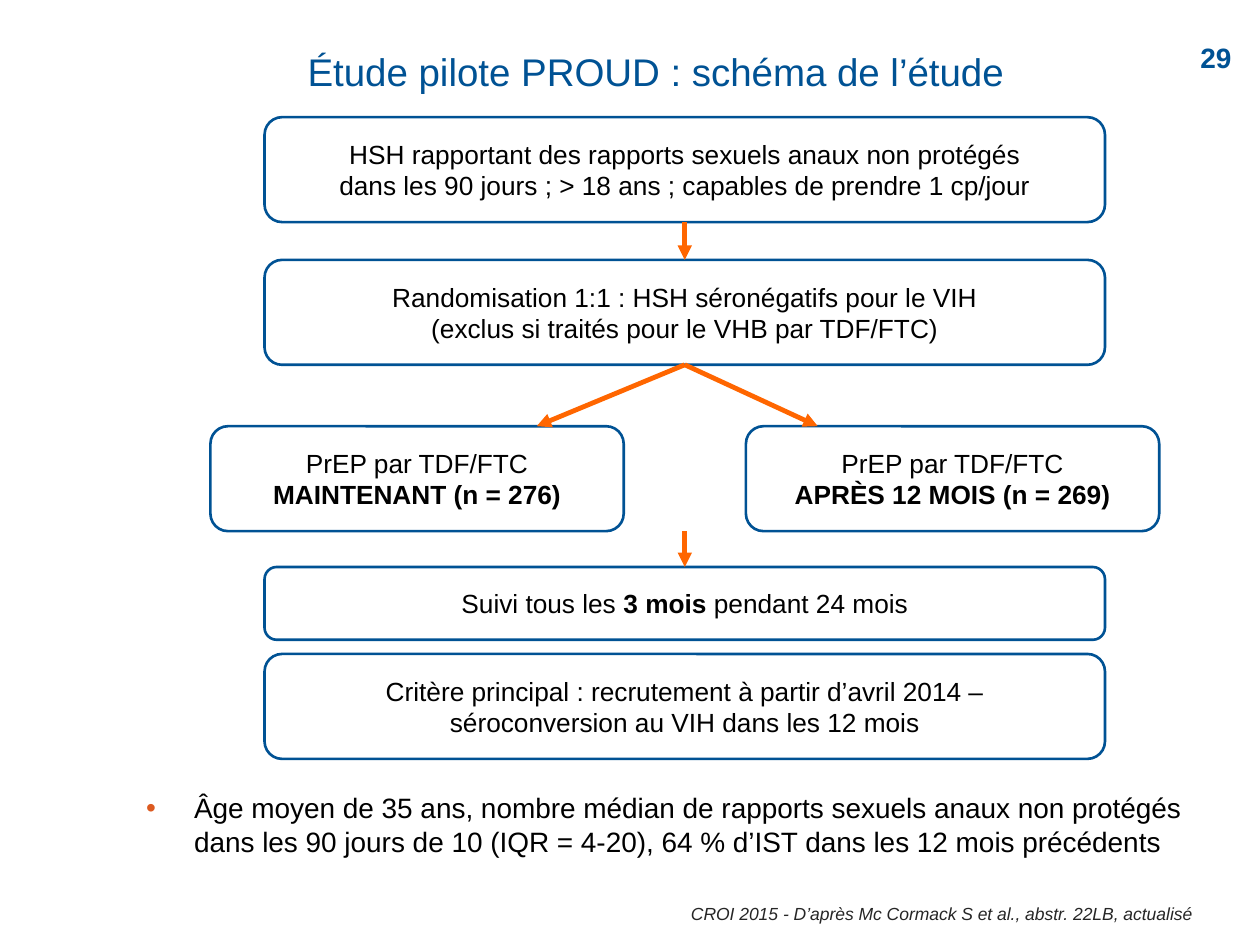
from lxml.etree import SubElement
from pptx import Presentation
from pptx.dml.color import RGBColor
from pptx.enum.shapes import MSO_CONNECTOR, MSO_SHAPE
from pptx.enum.text import MSO_ANCHOR, MSO_AUTO_SIZE, PP_ALIGN
from pptx.oxml.ns import qn
from pptx.util import Inches, Pt

WIDTH, HEIGHT = Inches(10), Inches(7.5)
BLUE, ORANGE, BULLET = "005294", "FF6600", "DC5A20"
BLACK, GREY, WHITE = "000000", "262626", "FFFFFF"

# Shares of the slide, in percent
WIDE_LEFT, WIDE = 21, 66.7
ARM_LEFTS, ARM_WIDE = (16.7, 59.2), 32.8
TALL, SHORT = 11.1, 7.7
CRITERIA_TOP, RANDOM_TOP, ARM_TOP, FOLLOW_TOP, OUTCOME_TOP = 12.4, 27.5, 45.1, 60, 69.2
ARM_ARROW_ENDS = (42.6, 64.9)
CENTRE = WIDE_LEFT + WIDE / 2

BOX_TEXT = {"size": Pt(15)}
BOTTOM, TOP = 2, 0


def color(hex_code):
    return RGBColor.from_string(hex_code)


def across(share):
    return round(WIDTH * share / 100)


def down(share):
    return round(HEIGHT * share / 100)


def area(left, top, width, height):
    return across(left), down(top), across(width), down(height)


def apply_format(target, values):
    for name, value in values.items():
        setattr(target, name, value)


def write(shape, paragraphs, font, ink, align=PP_ALIGN.CENTER, frame_format=None):
    """Fill a shape with paragraphs, each a list of (text, bold); a newline is a line break."""
    frame = shape.text_frame
    apply_format(frame, {"word_wrap": True, "auto_size": MSO_AUTO_SIZE.NONE,
                         "vertical_anchor": MSO_ANCHOR.MIDDLE, **(frame_format or {})})
    for number, runs in enumerate(paragraphs):
        paragraph = frame.add_paragraph() if number else frame.paragraphs[0]
        paragraph.alignment = align
        for text, bold in runs:
            for row, line in enumerate(text.split("\n")):
                if row:
                    paragraph.add_line_break()
                run = paragraph.add_run()
                run.text = line
                apply_format(run.font, {"name": "Arial", "bold": bold, **font})
                run.font.color.rgb = color(ink)
    return frame


def no_margins():
    return dict.fromkeys(("margin_left", "margin_top", "margin_right", "margin_bottom"), 0)


def move(shape, *shares):
    apply_format(shape, dict(zip(("left", "top", "width", "height"), area(*shares))))


def add_title(slide, text):
    title = slide.shapes.title
    move(title, 11.6, 3.5, 80.9, 8.8)
    frame = write(title, [[(text, False)]], {"size": Pt(22)}, BLUE, frame_format=no_margins())
    frame.paragraphs[0].line_spacing = Pt(22)


def add_bullet(slide, text):
    body = slide.placeholders[1]
    move(body, 11.6, 83.7, 83.4, 9.6)
    frame = write(body, [[(text, False)]], {"size": Pt(16)}, BLACK, PP_ALIGN.LEFT,
                  {**no_margins(), "vertical_anchor": MSO_ANCHOR.TOP})
    properties = frame.paragraphs[0]._p.get_or_add_pPr()
    indent = Inches(0.38)
    properties.set("marL", str(indent))
    properties.set("indent", str(-indent))
    SubElement(SubElement(properties, qn("a:buClr")), qn("a:srgbClr")).set("val", BULLET)
    SubElement(properties, qn("a:buChar")).set("char", "•")


def add_label(slide, shares, text, font, ink, align, frame_format=None):
    label = slide.shapes.add_textbox(*area(*shares))
    write(label, [[(text, font.get("bold", False))]], font, ink, align, frame_format)


def add_step(slide, left, top, width, height, paragraphs):
    step = slide.shapes.add_shape(MSO_SHAPE.ROUNDED_RECTANGLE, *area(left, top, width, height))
    step.shadow.inherit = False
    step.fill.solid()
    step.fill.fore_color.rgb = color(WHITE)
    step.line.color.rgb = color(BLUE)
    step.line.width = Pt(1.5)
    write(step, paragraphs, BOX_TEXT, BLACK)
    return step


def add_arrow(slide, start, end, source=None, target=None):
    """Draw an arrow, joined to the bottom of source and the top of target if given."""
    arrow = slide.shapes.add_connector(MSO_CONNECTOR.STRAIGHT, across(start[0]), down(start[1]),
                                       across(end[0]), down(end[1]))
    if source is not None:
        arrow.begin_connect(source, BOTTOM)
    if target is not None:
        arrow.end_connect(target, TOP)
    arrow.line.color.rgb = color(ORANGE)
    arrow.line.width = Pt(2.75)
    SubElement(arrow.line._get_or_add_ln(), qn("a:tailEnd")).set("type", "triangle")
    SubElement(arrow._element.spPr, qn("a:effectLst"))


def add_flow(slide):
    def wide_step(top, height, *runs):
        return add_step(slide, WIDE_LEFT, top, WIDE, height, [runs])

    criteria = wide_step(CRITERIA_TOP, TALL, (
        "HSH rapportant des rapports sexuels anaux non protégés\n"
        "dans les 90 jours ; > 18 ans ; capables de prendre 1 cp/jour", False))
    randomisation = wide_step(RANDOM_TOP, TALL, (
        "Randomisation 1:1 : HSH séronégatifs pour le VIH\n"
        "(exclus si traités pour le VHB par TDF/FTC)", False))
    for left, timing in zip(ARM_LEFTS, ("MAINTENANT (n = 276)", "APRÈS 12 MOIS (n = 269)")):
        add_step(slide, left, ARM_TOP, ARM_WIDE, TALL,
                 [[("PrEP par TDF/FTC", False)], [(timing, True)]])
    follow_up = wide_step(FOLLOW_TOP, SHORT, ("Suivi tous les ", False), ("3 mois ", True),
                          ("pendant 24 mois", False))
    wide_step(OUTCOME_TOP, TALL, (
        "Critère principal : recrutement à partir d’avril 2014 –\n"
        "séroconversion au VIH dans les 12 mois", False))

    add_arrow(slide, (CENTRE, CRITERIA_TOP + TALL), (CENTRE, RANDOM_TOP), criteria, randomisation)
    for end in ARM_ARROW_ENDS:
        add_arrow(slide, (CENTRE, RANDOM_TOP + TALL), (end, ARM_TOP), randomisation)
    add_arrow(slide, (CENTRE, ARM_TOP + TALL), (CENTRE, FOLLOW_TOP), target=follow_up)


def main():
    deck = Presentation()
    deck.slide_width, deck.slide_height = WIDTH, HEIGHT
    slide = deck.slides.add_slide(deck.slide_layouts[1])
    add_title(slide, "Étude pilote PROUD : schéma de l’étude")
    add_bullet(slide, "Âge moyen de 35 ans, nombre médian de rapports sexuels anaux non protégés "
                      "dans les 90 jours de 10 (IQR = 4-20), 64 % d’IST dans les 12 mois précédents")
    add_flow(slide)
    add_label(slide, (30.3, 93.3, 64.7, 6.8),
              "CROI 2015 - D’après Mc Cormack S et al., abstr. 22LB, actualisé ",
              {"size": Pt(10), "italic": True}, GREY, PP_ALIGN.RIGHT, no_margins())
    add_label(slide, (93.2, 3.3, 6.6, 5.6), "29", {"size": Pt(16), "bold": True},
              BLUE, PP_ALIGN.CENTER)
    deck.save("out.pptx")


if __name__ == "__main__":
    main()
